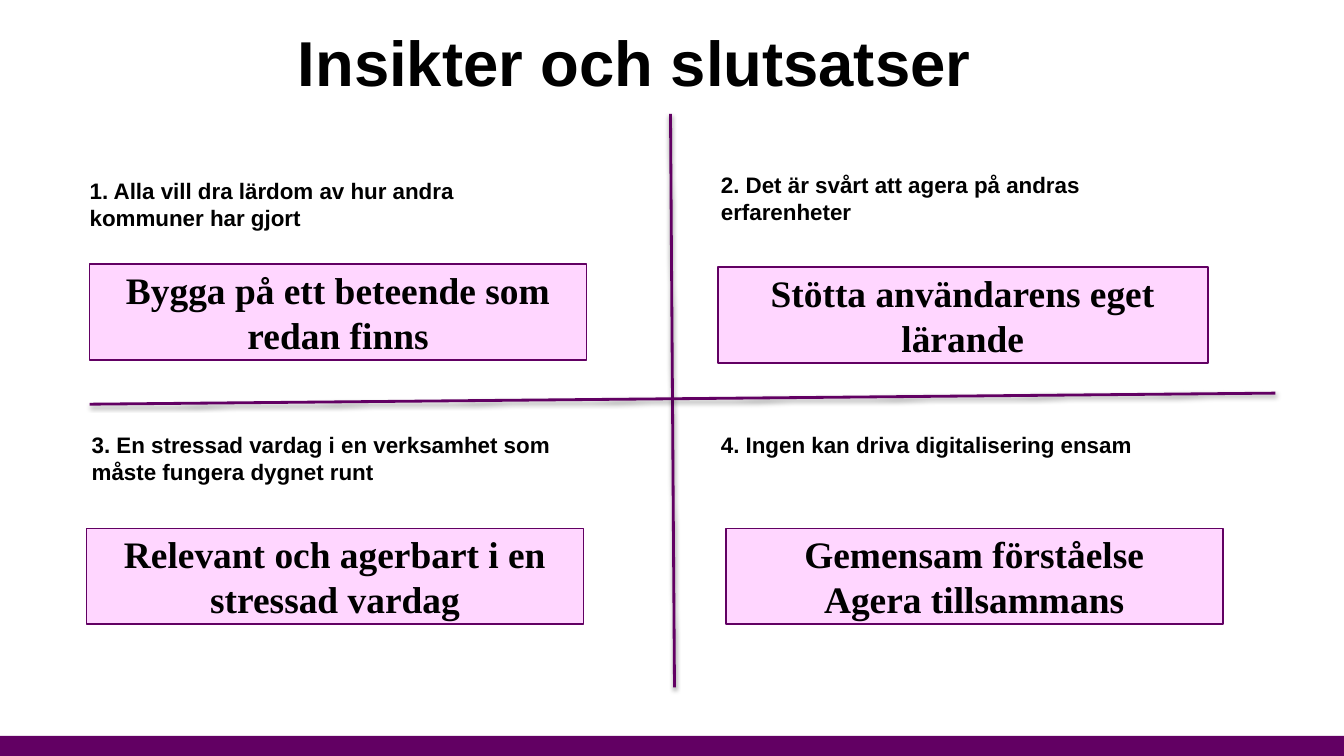
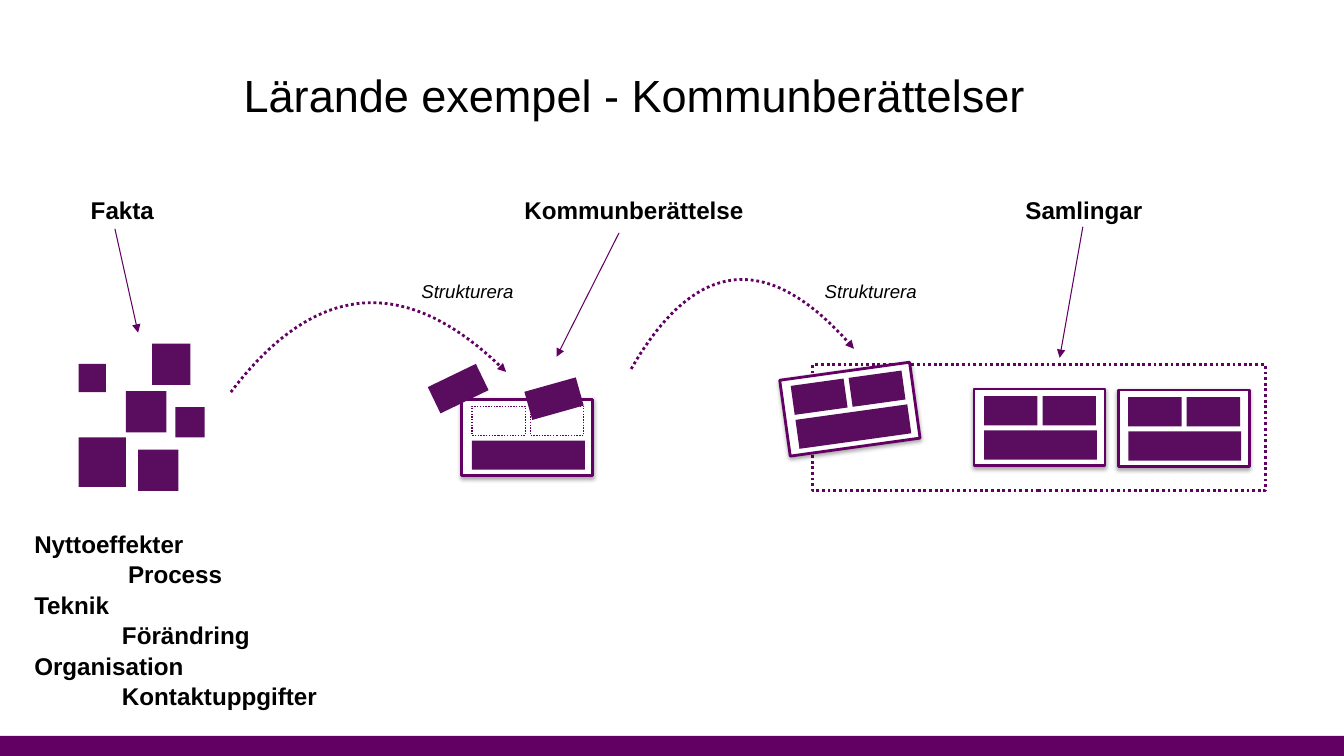
import math

from lxml import etree
from pptx import Presentation
from pptx import util as u
from pptx.dml.color import RGBColor
from pptx.enum import dml, shapes, text
from pptx.oxml.ns import qn

SLIDE_W, SLIDE_H = 13.33, 7.5
PURPLE, TILE, PINK, WHITE, BLACK = "620063", "5A0D5F", "FFD6FF", "FFFFFF", "000000"
SANS, SERIF = "Arial", "Times New Roman"
DOTS = dml.MSO_LINE.ROUND_DOT
CARD_W, CARD_H = 1.3, 0.76
TILE_W, TILE_H = 0.53, 0.29
CARD_PARTS = [(0.1, 0.07, TILE_W), (0.68, 0.07, TILE_W), (0.1, 0.41, 1.12)]


def rgb(value):
    """Turn a hex string into a colour."""
    return RGBColor.from_string(value)


def set_effect(sp, alpha=0):
    """Clear the theme shadow, or set a soft one below the shape."""
    effects = etree.SubElement(sp._element.spPr, qn("a:effectLst"))
    if alpha:
        shadow = etree.SubElement(effects, qn("a:outerShdw"), blurRad="38100",
                                  dist="20320", dir="5400000", rotWithShape="0")
        color = etree.SubElement(shadow, qn("a:srgbClr"), val=BLACK)
        etree.SubElement(color, qn("a:alpha"), val=str(alpha * 1000))


def set_line(sp, width, dash=None, arrow=False):
    """Give a shape or connector a purple line."""
    sp.line.color.rgb = rgb(PURPLE)
    sp.line.width = u.Pt(width)
    if dash:
        sp.line.dash_style = dash
    if arrow:
        etree.SubElement(sp.line._get_or_add_ln(), qn("a:tailEnd"), type="triangle")


def set_text(sp, words, size, font=SANS, bold=False, italic=False,
             align=None, spacing=None, anchor=text.MSO_ANCHOR.TOP):
    """Write words into a shape with one style."""
    tf = sp.text_frame
    tf.word_wrap = True
    tf.vertical_anchor = anchor
    tf.margin_left = tf.margin_right = tf.margin_top = tf.margin_bottom = u.Inches(0.03)
    tf.text = words
    for p in tf.paragraphs:
        p.alignment = align
        p.line_spacing = spacing
        for r in p.runs:
            r.font.name, r.font.size = font, u.Pt(size)
            r.font.bold, r.font.italic = bold, italic
            r.font.color.rgb = rgb(BLACK)
    return tf


def add_text(s, box, words, size, **style):
    """Add a text box."""
    return set_text(s.shapes.add_textbox(*map(u.Inches, box)), words, size, **style)


def add_rect(s, box, fill, line=0, dash=None, angle=0, shadow=0):
    """Add a rectangle, outlined when a line width is given."""
    sp = s.shapes.add_shape(shapes.MSO_SHAPE.RECTANGLE, *map(u.Inches, box))
    sp.fill.solid()
    sp.fill.fore_color.rgb = rgb(fill)
    sp.rotation = angle
    if line:
        set_line(sp, line, dash)
    else:
        sp.line.fill.background()
    set_effect(sp, shadow)
    return sp


def add_line(s, start, end, width, arrow=False, shadow=0):
    """Add a straight line between two points."""
    sp = s.shapes.add_connector(shapes.MSO_CONNECTOR.STRAIGHT,
                                *map(u.Inches, (*start, *end)))
    set_line(sp, width, arrow=arrow)
    set_effect(sp, shadow)


def add_arc(s, *controls, steps=40):
    """Add a dotted arrow along a cubic curve."""
    def point(t):
        weights = (1 - t) ** 3, 3 * t * (1 - t) ** 2, 3 * t * t * (1 - t), t ** 3
        return tuple(u.Inches(sum(w * c[i] for w, c in zip(weights, controls)))
                     for i in (0, 1))

    points = [point(i / steps) for i in range(steps + 1)]
    builder = s.shapes.build_freeform(*points[0])
    builder.add_line_segments(points[1:], close=False)
    sp = builder.convert_to_shape()
    sp.fill.background()
    set_line(sp, 2, DOTS, arrow=True)
    set_effect(sp)


def add_base(prs, title, top, size, bold=False):
    """Add a slide with the bottom band and a centred title."""
    s = prs.slides.add_slide(prs.slide_layouts[6])
    add_rect(s, (0, SLIDE_H - 0.2, SLIDE_W, 0.2), PURPLE)
    add_text(s, (0.53, top, 11.52, 0.8), title, size, bold=bold,
             align=text.PP_ALIGN.CENTER)
    return s


def add_quadrant(s, heading, heading_at, conclusion, panel):
    """Add an insight and the panel with its conclusion."""
    add_text(s, (*heading_at, 4.7, 0.64), heading, 16, bold=True)
    set_text(add_rect(s, panel, PINK, line=1), conclusion, 26.7, font=SERIF,
             bold=True, align=text.PP_ALIGN.CENTER, anchor=text.MSO_ANCHOR.MIDDLE)


def add_card(s, x, y, angle=0, slots=False):
    """Add a card with three tiles, turned about its centre."""
    add_rect(s, (x, y, CARD_W, CARD_H), WHITE, line=2, angle=angle, shadow=35)
    cos, sin = math.cos(math.radians(angle)), math.sin(math.radians(angle))
    for left, top, width in CARD_PARTS:
        dx, dy = left + (width - CARD_W) / 2, top + (TILE_H - CARD_H) / 2
        box = (x + (CARD_W - width) / 2 + dx * cos - dy * sin,
               y + (CARD_H - TILE_H) / 2 + dx * sin + dy * cos, width, TILE_H)
        if slots and width == TILE_W:
            add_rect(s, box, WHITE, line=1, dash=DOTS)
        else:
            add_rect(s, box, TILE, angle=angle)


def add_facts(s, x, y):
    """Add the scattered squares of facts."""
    for left, top, width, height in [
            (0, 0.2, 0.27, 0.28), (0.47, 0.47, 0.4, 0.41), (0, 0.93, 0.47, 0.49),
            (0.59, 1.05, 0.4, 0.41), (0.73, 0, 0.38, 0.41), (0.96, 0.63, 0.29, 0.3)]:
        add_rect(s, (x + left, y + top, width, height), TILE)


def add_story(s, x, y):
    """Add a half-filled card with two loose tiles above it."""
    add_card(s, x, y, slots=True)
    for left, top, angle in [(-0.3, -0.25, 334.2), (0.65, -0.15, 344.3)]:
        add_rect(s, (x + left, y + top, TILE_W, TILE_H), TILE, angle=angle)


def add_collection(s, x, y):
    """Add a dotted frame with three cards."""
    add_rect(s, (x, y, 4.49, 1.25), WHITE, line=2, dash=DOTS)
    add_card(s, x - 0.28, y + 0.06, angle=352.1)
    add_card(s, x + 1.6, y + 0.24)
    add_card(s, x + 3.03, y + 0.25)


def add_topics(s, x, y, topics):
    """Add the list of topics with every second one indented."""
    tf = add_text(s, (x, y, 5.25, 1.85), "\n".join(words for words, _ in topics),
                  17.3, bold=True)
    for i, (p, (_, indent)) in enumerate(zip(tf.paragraphs, topics)):
        p._p.get_or_add_pPr().set("marL", str(u.Inches(indent)))
        p.space_before = u.Pt(1 if i else 0)


def build_insights(prs):
    """Build the slide with four insights around a cross."""
    s = add_base(prs, "Insikter och slutsatser", 0.2, 45.3, bold=True)
    for quadrant in [
            ("1. Alla vill dra lärdom av hur andra kommuner har gjort", (0.86, 1.73),
             "Bygga på ett beteende som redan finns", (0.89, 2.62, 4.93, 0.95)),
            ("2. Det är svårt att agera på andras erfarenheter", (7.12, 1.67),
             "Stötta användarens eget lärande", (7.12, 2.65, 4.86, 0.95)),
            ("3. En stressad vardag i en verksamhet som måste fungera dygnet runt",
             (0.88, 4.25), "Relevant och agerbart i en stressad vardag",
             (0.86, 5.24, 4.93, 0.95)),
            ("4. Ingen kan driva digitalisering ensam", (7.12, 4.25),
             "Gemensam förståelse\nAgera tillsammans", (7.2, 5.24, 4.93, 0.95))]:
        add_quadrant(s, *quadrant)
    add_line(s, (6.69, 6.82), (6.65, 1.13), 2, shadow=38)
    add_line(s, (12.65, 3.9), (0.89, 4.01), 2, shadow=38)


def build_example(prs):
    """Build the slide on the way from facts to collections."""
    s = add_base(prs, "Lärande exempel - Kommunberättelser", 0.64, 32.2)
    add_facts(s, 0.78, 3.41)
    add_story(s, 4.58, 3.96)
    add_collection(s, 8.06, 3.62)
    add_arc(s, (2.29, 3.89), (3.13, 2.78), (4.04, 2.71), (5.02, 3.69))
    add_arc(s, (6.26, 3.66), (6.9, 2.55), (7.63, 2.48), (8.47, 3.46))
    for x in (4.15, 8.15):
        add_text(s, (x, 2.7, 1.1, 0.59), "Strukturera", 13.3, italic=True, spacing=1.2)
    for words, x, start, end in [
            ("Fakta", 0.87, (1.14, 2.27), (1.37, 3.3)),
            ("Kommunberättelse", 5.17, (6.14, 2.31), (5.52, 3.54)),
            ("Samlingar", 10.14, (10.74, 2.25), (10.51, 3.55))]:
        add_text(s, (x, 1.85, 2.72, 0.41), words, 17.3, bold=True, spacing=1.2)
        add_line(s, start, end, 0.75, arrow=True)
    add_topics(s, 0.31, 5.22, [
        ("Nyttoeffekter", 0), ("Process", 0.93), ("Teknik", 0),
        ("Förändring", 0.87), ("Organisation", 0), ("Kontaktuppgifter", 0.87)])


def main():
    """Build and save the presentation."""
    prs = Presentation()
    prs.slide_width, prs.slide_height = u.Inches(SLIDE_W), u.Inches(SLIDE_H)
    build_insights(prs)
    build_example(prs)
    prs.save("out.pptx")


if __name__ == "__main__":
    main()
